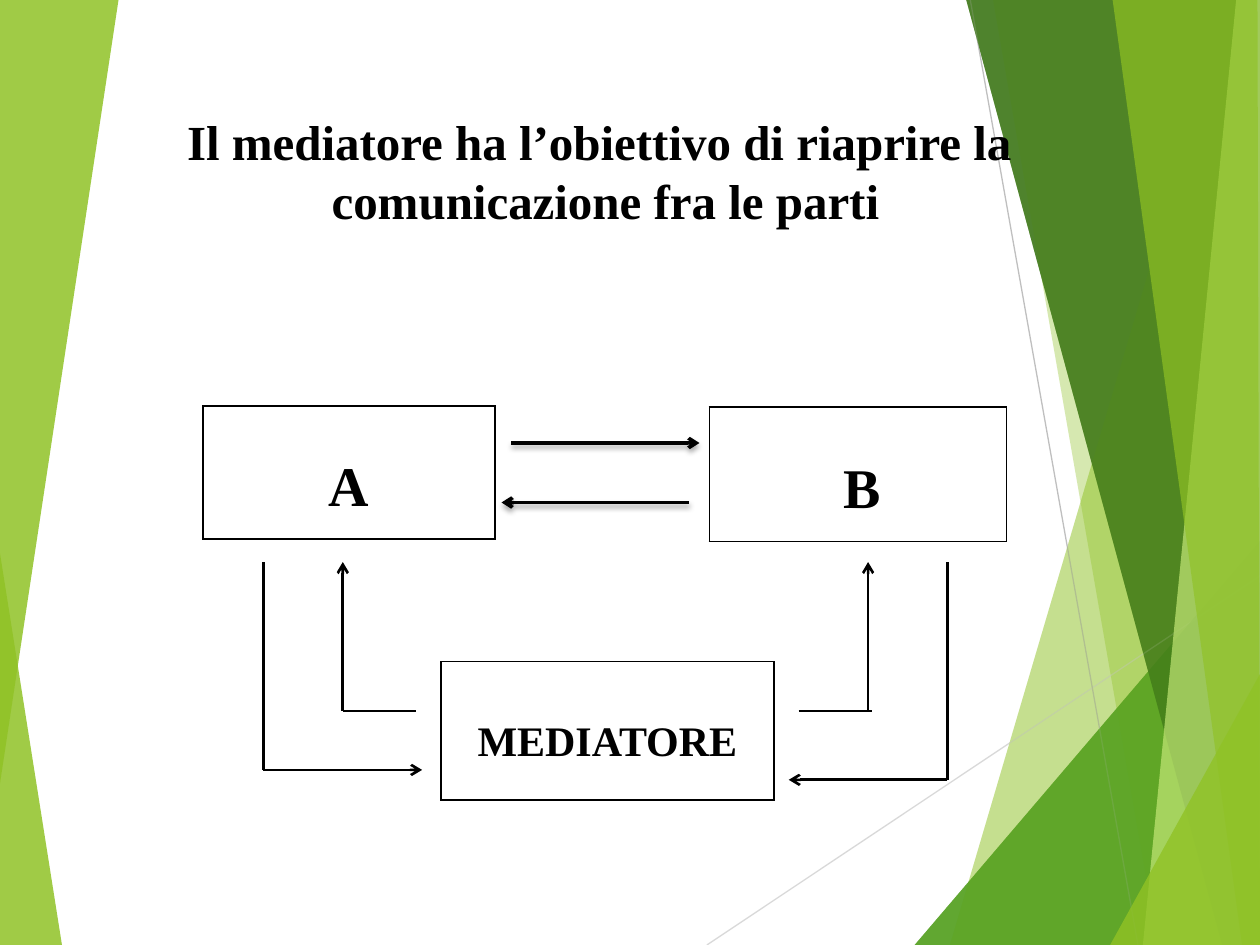
from lxml import etree
from pptx import Presentation
from pptx import util as u
from pptx.dml.color import RGBColor
from pptx.enum import shapes, text
from pptx.oxml import parse_xml
from pptx.oxml.ns import nsdecls, qn

COLOURS = {
    "ink": "000000", "lime": "90C226", "green": "54A021", "forest": "3F7819",
    "pale": "C0E474", "silver": "BFBFBF", "mist": "D9D9D9",
}
WIDTH, HEIGHT = 25.4, 19.05

LEFT_LOWER = ("lime", 85, [(0, 11.15), (1.25, HEIGHT), (0, HEIGHT)])
LEFT_UPPER = ("lime", 85, [(0, 0), (2.39, 0), (0, 15.8)])
RIGHT_FACETS = [
    ("lime", 30, [(24.77, 0), (19.15, HEIGHT), (WIDTH, HEIGHT), (WIDTH, 0)]),
    ("lime", 20, [(20.02, 0), (23.34, HEIGHT), (WIDTH, HEIGHT), (WIDTH, 0)]),
    ("green", 72, [(18.44, HEIGHT), (WIDTH, 10.9), (WIDTH, HEIGHT)]),
    ("forest", 70, [(19.48, 0), (24.64, HEIGHT), (WIDTH, HEIGHT), (WIDTH, 0)]),
    ("pale", 70, [(24.92, 0), (23.04, HEIGHT), (WIDTH, HEIGHT), (WIDTH, 0)]),
    ("lime", 65, [(22.43, 0), (25.04, HEIGHT), (WIDTH, HEIGHT), (25.35, 0)]),
    ("lime", 80, [(22.38, HEIGHT), (WIDTH, 13.59), (WIDTH, HEIGHT)]),
]
RAYS = [
    ((14.25, HEIGHT), (WIDTH, 11.61), "mist"),
    ((19.56, 0), (22.94, HEIGHT), "silver"),
]
PARTIES = [
    ((4.09, 8.18, 5.89, 2.69), [("A", 32, True)]),
    ((14.3, 8.2, 5.99, 2.72), [(" ", 18, False), ("B", 32, True)]),
    ((8.89, 13.34, 6.71, 2.79), [("MEDIATORE", 24, True)]),
]
MEDIATOR_LINES = [
    ((6.91, 14.33), (8.38, 14.33), False),
    ((16.1, 14.33), (17.58, 14.33), False),
    ((6.91, 14.33), (6.91, 11.33), True),
    ((17.5, 14.33), (17.5, 11.33), True),
    ((5.31, 15.52), (8.51, 15.52), True),
    ((5.31, 15.52), (5.31, 11.33), False),
    ((19.1, 11.33), (19.1, 15.72), False),
    ((19.1, 15.72), (15.9, 15.72), True),
]
PARTY_ARROWS = [
    ((10.31, 8.93), (14.1, 8.93)),
    ((13.89, 10.13), (10.11, 10.13)),
]


class Page:
    """Holds the style and the current slide."""

    font = "Times New Roman"

    def __init__(self, deck):
        self.shapes = deck.slides.add_slide(deck.slide_layouts[6]).shapes

    def colour(self, name):
        return RGBColor.from_string(COLOURS[name])

    def style(self, span, size, bold=True):
        span.font.name = self.font
        span.font.size = u.Pt(size)
        span.font.bold = bold
        span.font.color.rgb = self.colour("ink")

    def facet(self, colour, opacity, points):
        start, *rest = [(u.Cm(x), u.Cm(y)) for x, y in points]
        builder = self.shapes.build_freeform(*start)
        builder.add_line_segments(rest, close=True)
        shape = builder.convert_to_shape()
        shape.shadow.inherit = False
        shape.line.fill.background()
        shape.fill.solid()
        shape.fill.fore_color.rgb = self.colour(colour)
        value = shape.fill._xPr.find(".//" + qn("a:srgbClr"))
        etree.SubElement(value, qn("a:alpha"), val=str(opacity * 1000))

    def line(self, start, end, colour="ink", width=1.5, arrow=False, shadow=False):
        ends = [u.Cm(value) for value in (*start, *end)]
        line = self.shapes.add_connector(shapes.MSO_CONNECTOR.STRAIGHT, *ends)
        line.line.color.rgb = self.colour(colour)
        line.line.width = u.Pt(width)
        if arrow:
            etree.SubElement(line.line._get_or_add_ln(), qn("a:tailEnd"), type="arrow")
        effects = etree.SubElement(line._element.spPr, qn("a:effectLst"))
        if shadow:
            effects.append(parse_xml(
                f'<a:outerShdw {nsdecls("a")} blurRad="{u.Pt(3)}" dist="{u.Pt(2)}" '
                f'dir="5400000" rotWithShape="0"><a:srgbClr val="{COLOURS["ink"]}">'
                '<a:alpha val="35000"/></a:srgbClr></a:outerShdw>'))

    def party(self, place, spans):
        left, top, width, height = [u.Cm(value) for value in place]
        table = self.shapes.add_table(1, 1, left, top, width, height).table
        table.first_row = table.horz_banding = False
        cell = table.cell(0, 0)
        cell.margin_left = cell.margin_right = u.Cm(0.2)
        cell.margin_top = cell.margin_bottom = 0
        cell.vertical_anchor = text.MSO_ANCHOR.MIDDLE
        properties = cell._tc.get_or_add_tcPr()
        for side in "LRTB":
            properties.append(parse_xml(
                f'<a:ln{side} {nsdecls("a")} w="{u.Pt(1)}"><a:solidFill>'
                f'<a:srgbClr val="{COLOURS["ink"]}"/></a:solidFill></a:ln{side}>'))
        cell.fill.background()
        para = cell.text_frame.paragraphs[0]
        para.alignment = text.PP_ALIGN.CENTER
        para.line_spacing = 1.5
        for words, size, bold in spans:
            span = para.add_run()
            span.text = words
            self.style(span, size, bold)

    def title(self, place, words):
        box = self.shapes.add_textbox(*[u.Cm(value) for value in place])
        frame = box.text_frame
        frame.word_wrap = True
        frame.auto_size = text.MSO_AUTO_SIZE.SHAPE_TO_FIT_TEXT
        frame.text = words
        for para in frame.paragraphs:
            para.alignment = text.PP_ALIGN.CENTER
            self.style(para.runs[0], 28)


def main():
    deck = Presentation()
    deck.slide_width, deck.slide_height = u.Cm(WIDTH), u.Cm(HEIGHT)
    page = Page(deck)
    for facet in [LEFT_LOWER, *RIGHT_FACETS]:
        page.facet(*facet)
    for start, end, colour in RAYS:
        page.line(start, end, colour, width=0.75)
    for facet in [*RIGHT_FACETS, LEFT_UPPER]:
        page.facet(*facet)
    for place, spans in PARTIES:
        page.party(place, spans)
    for start, end, arrow in MEDIATOR_LINES:
        page.line(start, end, arrow=arrow)
    for start, end in PARTY_ARROWS:
        page.line(start, end, width=2, arrow=True, shadow=True)
    page.title((3.3, 2.13, 17.81, 2.64),
               "Il mediatore ha l’obiettivo di riaprire la \ncomunicazione fra le parti")
    deck.save("out.pptx")


if __name__ == "__main__":
    main()
